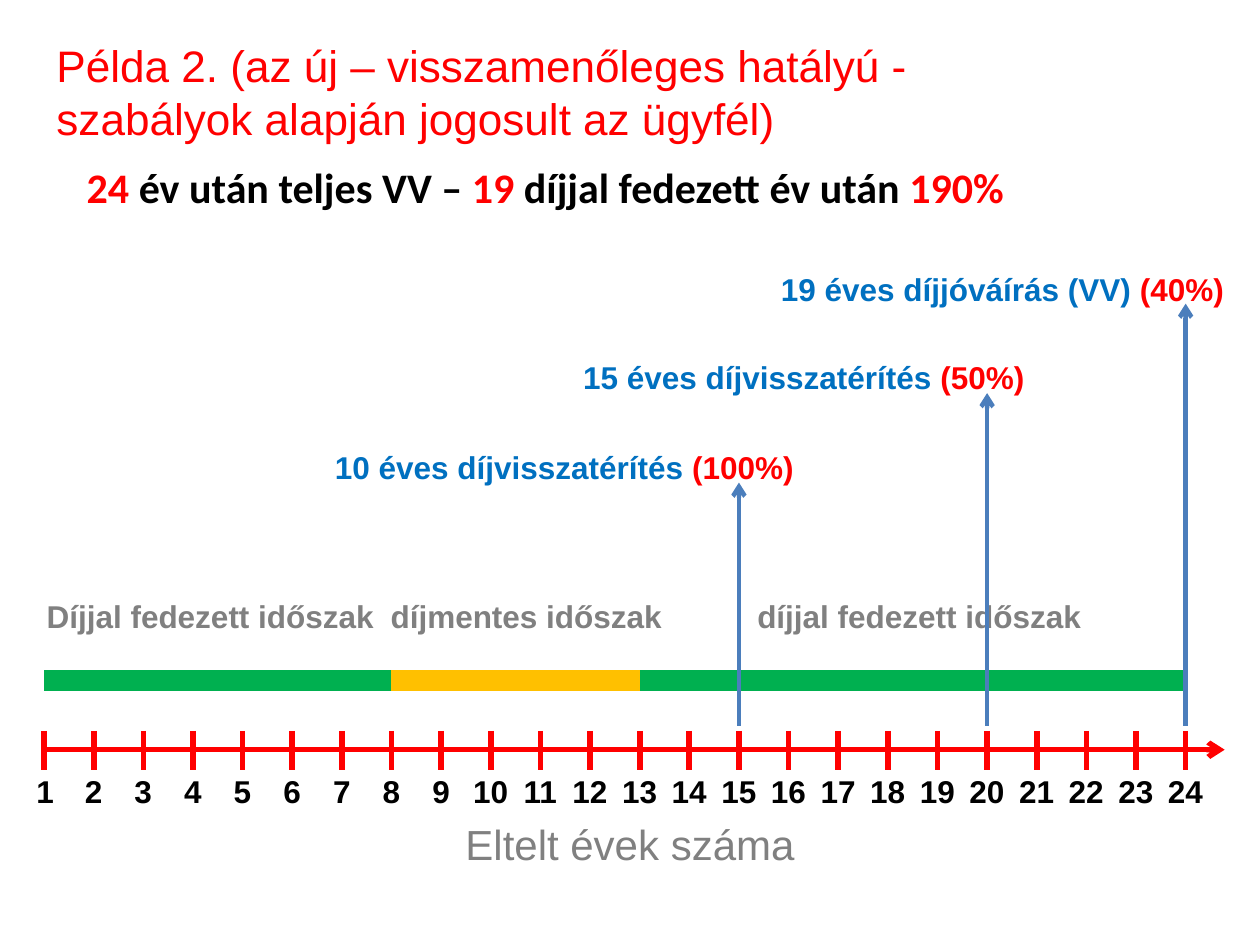
from dataclasses import dataclass

from lxml import etree
from pptx import Presentation
from pptx.dml.color import RGBColor
from pptx.enum.shapes import MSO_CONNECTOR
from pptx.enum.text import MSO_ANCHOR, PP_ALIGN
from pptx.oxml.ns import qn
from pptx.util import Inches, Pt

STRAIGHT = MSO_CONNECTOR.STRAIGHT
TOP, MIDDLE = MSO_ANCHOR.TOP, MSO_ANCHOR.MIDDLE
LEFT, CENTER = PP_ALIGN.LEFT, PP_ALIGN.CENTER


@dataclass(frozen=True)
class Theme:
    red: str = "FF0000"
    black: str = "000000"
    gray: str = "808080"
    blue: str = "0070C0"
    arrow: str = "4B7EBC"
    paid: str = "00B050"
    free: str = "FFC000"
    font: str = "Arial"
    accent_font: str = "Calibri"
    title: float = 25.2
    large: float = 24
    label: float = 18


T = Theme()

# Timeline geometry in inches
FIRST_X, LAST_X, YEARS = 0.35, 9.41, 24
AXIS_Y, BAR_Y, ARROW_Y = 5.95, 5.4, 5.76
TEXT_INSET = 0.1

PERIODS = [(1, 8, T.paid), (13, 24, T.paid), (8, 13, T.free)]
# year, arrow tip, label left, top and width, text, percentage
PAYOUTS = [
    (15, 3.83, 2.56, 3.51, 4.09, "10 éves díjvisszatérítés ", "(100%)"),
    (20, 3.12, 4.53, 2.79, 4.09, "15 éves díjvisszatérítés ", "(50%)"),
    (24, 2.41, 6.1, 2.09, 3.86, "19 éves díjjóváírás (VV) ", "(40%)"),
]


def year_x(year):
    return FIRST_X + (year - 1) * (LAST_X - FIRST_X) / (YEARS - 1)


def add_box(s, x, y, w, h, anchor=TOP, inset=TEXT_INSET):
    tf = s.shapes.add_textbox(Inches(x), Inches(y), Inches(w), Inches(h)).text_frame
    tf.word_wrap = True
    tf.vertical_anchor = anchor
    tf.margin_left = Inches(inset)
    return tf


def add_tabs(p, stops, algn):
    tabs = etree.SubElement(p._p.get_or_add_pPr(), qn("a:tabLst"))
    for stop in stops:
        etree.SubElement(tabs, qn("a:tab"), pos=str(Inches(stop)), algn=algn)


def write(p, text, size=T.label, color=T.black, bold=True, font=T.font, align=LEFT):
    p.alignment = align
    r = p.add_run()
    r.text = text
    r.font.size = Pt(size)
    r.font.bold = bold
    r.font.name = font
    r.font.color.rgb = RGBColor.from_string(color)


def add_line(s, x1, y1, x2, y2, color, width, arrow=False):
    line = s.shapes.add_connector(STRAIGHT, Inches(x1), Inches(y1), Inches(x2), Inches(y2))
    line.line.color.rgb = RGBColor.from_string(color)
    line.line.width = Pt(width)
    if arrow:
        etree.SubElement(line.line._get_or_add_ln(), qn("a:tailEnd"), type="arrow")
    etree.SubElement(line._element.spPr, qn("a:effectLst"))


def add_headings(s):
    tf = add_box(s, 0.35, 0.3, 7.87, 0.85, anchor=MIDDLE)
    write(tf.paragraphs[0],
          "Példa 2. (az új – visszamenőleges hatályú - szabályok alapján jogosult az ügyfél)",
          size=T.title, color=T.red, bold=False)
    p = add_box(s, 0.59, 1.23, 8.66, 0.5).paragraphs[0]
    for text, color in [("24", T.red), (" év után teljes VV – ", T.black), ("19", T.red),
                        (" díjjal fedezett év után ", T.black), ("190%", T.red)]:
        write(p, text, size=T.large, color=color, font=T.accent_font)


def add_axis(s):
    add_line(s, FIRST_X, AXIS_Y, 9.72, AXIS_Y, T.red, 3, arrow=True)
    for year in range(1, YEARS + 1):
        add_line(s, year_x(year), 5.8, year_x(year), 6.11, T.red, 3.25)

    # Year numbers are centred under their ticks
    left = 0.19
    tf = add_box(s, left, 6.08, 9.62, 0.9)
    p = tf.paragraphs[0]
    add_tabs(p, [year_x(y) - left - TEXT_INSET for y in range(2, YEARS + 1)], "ctr")
    write(p, "\t".join(str(y) for y in range(1, YEARS + 1)))
    p = tf.add_paragraph()
    p.space_before = Pt(5)
    write(p, "Eltelt évek száma", size=T.large, color=T.gray, bold=False, align=CENTER)


def add_periods(s):
    p = add_box(s, 0.2, 4.69, 9.21, 0.4, inset=0.17).paragraphs[0]
    add_tabs(p, [2.73, 5.64], "l")
    write(p, "Díjjal fedezett időszak\tdíjmentes időszak\tdíjjal fedezett időszak", color=T.gray)
    for start, end, color in PERIODS:
        add_line(s, year_x(start), BAR_Y, year_x(end), BAR_Y, color, 11.75)


def add_payout(s, year, tip, x, y, w, text, percent):
    add_line(s, year_x(year), ARROW_Y, year_x(year), tip, T.arrow, 2.5, arrow=True)
    p = add_box(s, x, y, w, 0.4).paragraphs[0]
    write(p, text, color=T.blue)
    write(p, percent, color=T.red)


def main():
    prs = Presentation()
    prs.slide_width, prs.slide_height = Inches(10), Inches(7.5)
    s = prs.slides.add_slide(prs.slide_layouts[6])
    add_headings(s)
    add_axis(s)
    add_periods(s)
    for payout in PAYOUTS:
        add_payout(s, *payout)
    prs.save("out.pptx")


if __name__ == "__main__":
    main()
